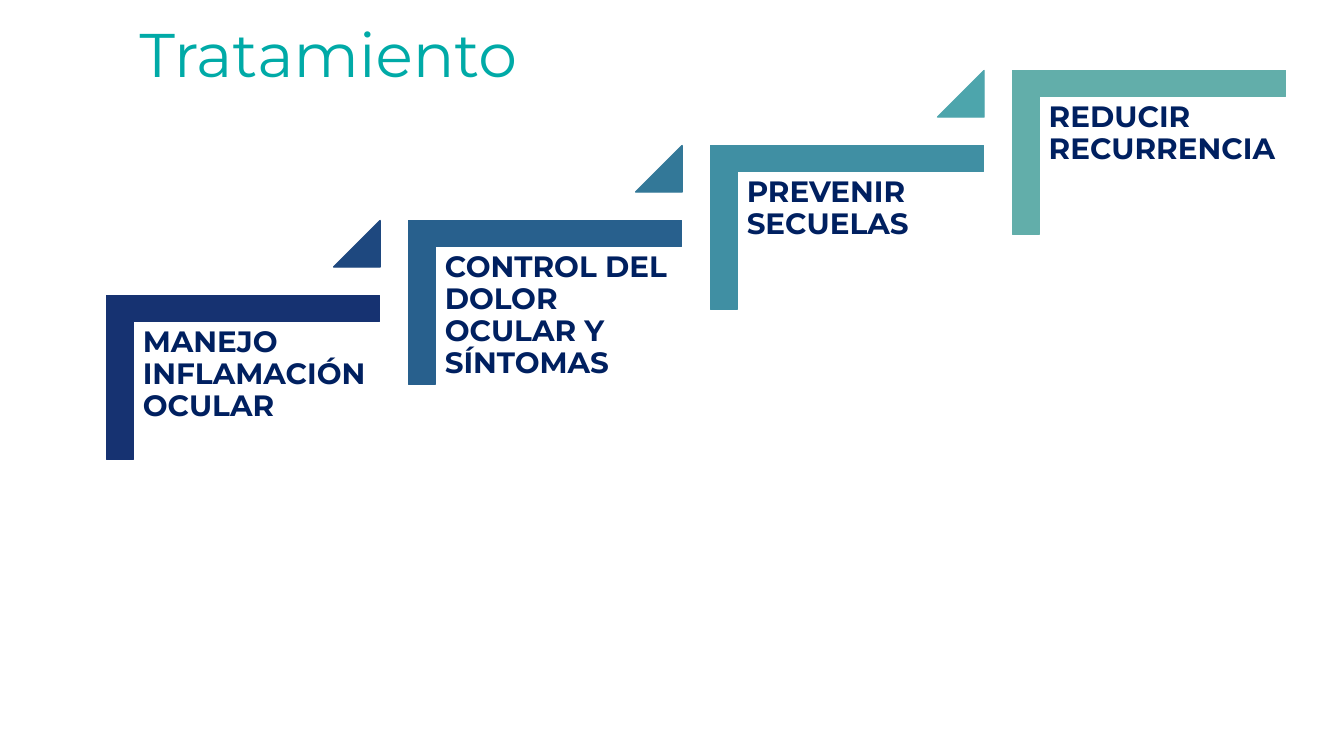
from pptx import Presentation
from pptx.dml.color import RGBColor
from pptx.enum.shapes import MSO_SHAPE as Shape
from pptx.enum.text import MSO_ANCHOR as Anchor, PP_ALIGN as Align
from pptx.util import Cm, Pt

FONT = "Montserrat"
NAVY, TEAL = "002060", "00AAA7"

# Each step moves right and up by the same amount
STEP_RIGHT, STEP_UP = 7.61, 1.89

# Text, bracket colour, colour of the triangle leading to the next step
STEPS = [
    ("MANEJO INFLAMACIÓN OCULAR", "163271", "1E487F"),
    ("CONTROL DEL DOLOR OCULAR Y SÍNTOMAS", "28608D", "337898"),
    ("PREVENIR SECUELAS", "408FA3", "4DA5AC"),
    ("REDUCIR RECURRENCIA", "62AEAA", None),
]


def color(value):
    return RGBColor.from_string(value)


def apply_format(target, values):
    for name, value in values.items():
        setattr(target, name, value)


def add_text(slide, text, box, font_color, font_format, paragraph_format):
    shape = slide.shapes.add_textbox(*map(Cm, box))
    frame = shape.text_frame
    apply_format(frame, {"word_wrap": True, "vertical_anchor": Anchor.TOP})
    paragraph = frame.paragraphs[0]
    paragraph.text = text
    apply_format(paragraph, paragraph_format)
    apply_format(paragraph.font, {"name": FONT, **font_format})
    paragraph.font.color.rgb = color(font_color)


def add_solid(slide, kind, box, fill, adjustments, rotation=0):
    shape = slide.shapes.add_shape(kind, *map(Cm, box))
    shape.shadow.inherit = False
    shape.rotation = rotation
    for index, value in enumerate(adjustments):
        shape.adjustments[index] = value
    shape.fill.solid()
    shape.fill.fore_color.rgb = color(fill)
    shape.line.color.rgb = color(fill)
    shape.line.width = Pt(1)


def add_step(slide, index, text, bracket_color, triangle_color):
    right, up = index * STEP_RIGHT, index * STEP_UP
    # Bracket: an L-shaped corner turned a quarter
    add_solid(slide, Shape.CORNER, (4.06 + right, 6.07 - up, 4.14, 6.88),
              bracket_color, (0.161, 0.161), rotation=90)
    add_text(slide, text, (3.35 + right, 8.13 - up, 6.22, 5.46), NAVY,
             {"size": Pt(21), "bold": True}, {"line_spacing": 0.9})
    if triangle_color:
        add_solid(slide, Shape.ISOSCELES_TRIANGLE,
                  (8.41 + right, 5.56 - up, 1.17, 1.17), triangle_color, (1,))


def main():
    presentation = Presentation()
    presentation.slide_width = Cm(33.87)
    presentation.slide_height = Cm(19.05)
    slide = presentation.slides.add_slide(presentation.slide_layouts[6])

    # Title
    add_text(slide, "Tratamiento", (-1.93, 0.28, 20.42, 2.13), TEAL,
             {"size": Pt(44)}, {"alignment": Align.CENTER})

    # Staircase of treatment goals
    for index, step in enumerate(STEPS):
        add_step(slide, index, *step)

    presentation.save("out.pptx")


if __name__ == "__main__":
    main()
